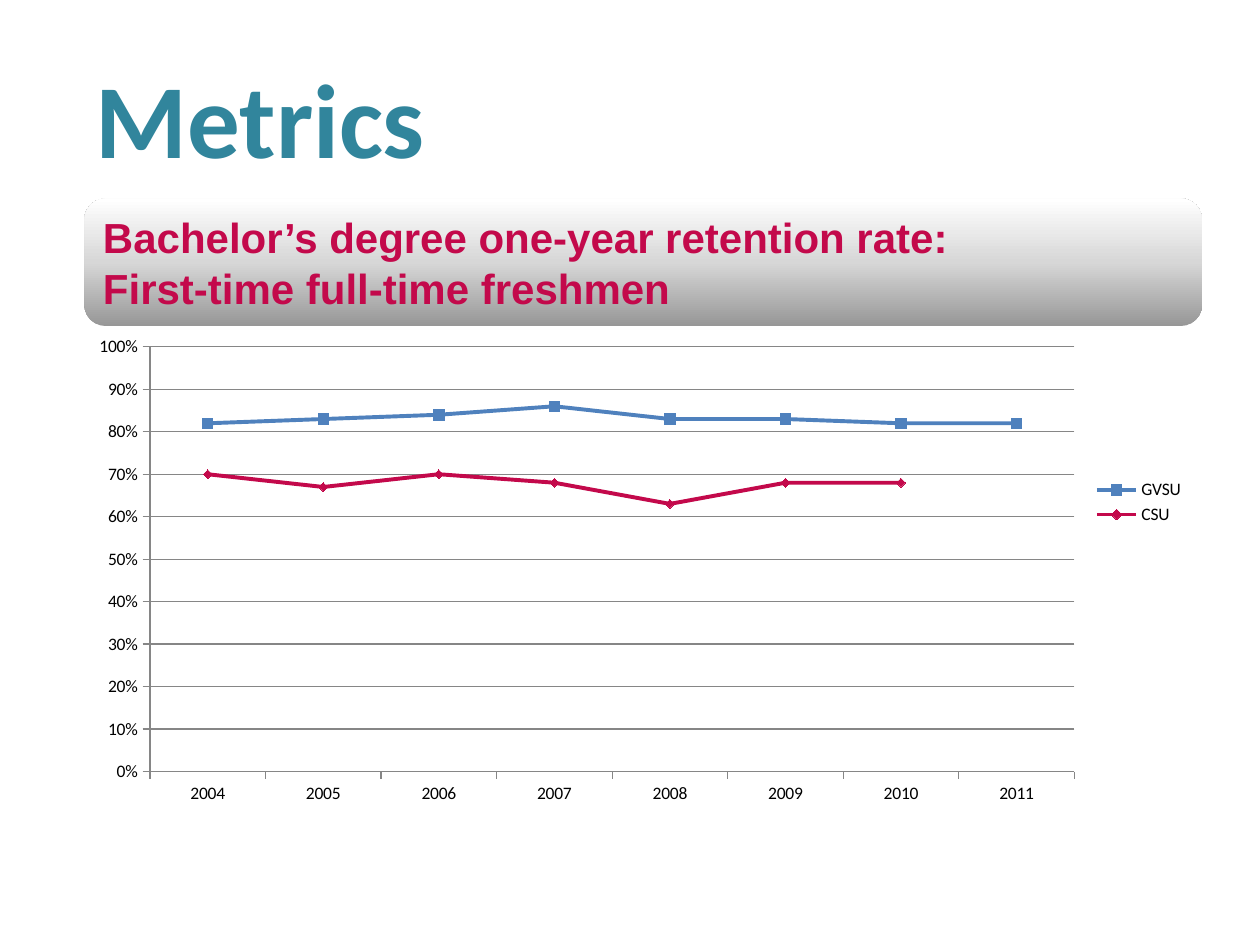
"""Build the Metrics slide: a title, a gradient banner and a retention line chart."""
import copy

import lxml.etree
import pptx
import pptx.chart.data
import pptx.dml.color
import pptx.enum.chart
import pptx.enum.dml
import pptx.enum.shapes
import pptx.enum.text
import pptx.util

WIDTH = pptx.util.Inches(10)
HEIGHT = pptx.util.Inches(7.5)
CRIMSON = "C3094B"
GREY = "868686"


def colour(value):
    return pptx.dml.color.RGBColor.from_string(value)


def area(left, top, width, height):
    return int(WIDTH * left), int(HEIGHT * top), int(WIDTH * width), int(HEIGHT * height)


deck = pptx.Presentation()
deck.slide_width, deck.slide_height = WIDTH, HEIGHT
page = deck.slides.add_slide(deck.slide_layouts[5])

title = page.shapes.title
title.left, title.top, title.width, title.height = area(0.066, 0.05, 0.367, 0.117)
title.text_frame.text = "Metrics"
title.text_frame.auto_size = pptx.enum.text.MSO_AUTO_SIZE.NONE
title.text_frame.vertical_anchor = pptx.enum.text.MSO_ANCHOR.TOP
heading = title.text_frame.paragraphs[0]
heading.alignment = pptx.enum.text.PP_ALIGN.LEFT
heading.font.name, heading.font.size, heading.font.bold = "Calibri", pptx.util.Pt(60), True
heading.font.color.rgb = colour("31859C")

rates = pptx.chart.data.CategoryChartData(number_format="0%")
rates.categories = [str(year) for year in range(2004, 2012)]
rates.add_series("GVSU", (0.82, 0.83, 0.84, 0.86, 0.83, 0.83, 0.82, 0.82))
rates.add_series("CSU", (0.7, 0.67, 0.7, 0.68, 0.63, 0.68, 0.68, None))
chart = page.shapes.add_chart(
    pptx.enum.chart.XL_CHART_TYPE.LINE_MARKERS, *area(0.066, 0.2, 0.884, 0.663), rates
).chart
chart.has_title = False
chart.font.name, chart.font.size = "Calibri", pptx.util.Pt(10)
chart.font.color.rgb = colour("000000")
chart.has_legend = True
chart.legend.position = pptx.enum.chart.XL_LEGEND_POSITION.RIGHT
chart.legend.include_in_layout = False

plot = chart.plots[0]
plot.vary_by_categories = False
marker_style = pptx.enum.chart.XL_MARKER_STYLE
looks = (("4F81BD", marker_style.SQUARE, 6), (CRIMSON, marker_style.DIAMOND, 5))
for series, (tint, style, size) in zip(plot.series, looks):
    series.smooth = False
    series.format.line.color.rgb = colour(tint)
    series.format.line.width = pptx.util.Pt(2.25)
    series.marker.style, series.marker.size = style, size
    series.marker.format.fill.solid()
    series.marker.format.fill.fore_color.rgb = colour(tint)
    series.marker.format.line.color.rgb = colour(tint)

scale = chart.value_axis
scale.minimum_scale, scale.maximum_scale, scale.major_unit = 0, 1, 0.1
scale.has_major_gridlines = True
scale.tick_labels.number_format = "0%"
scale.tick_labels.number_format_is_linked = False
for axis in (scale, chart.category_axis):
    axis.major_tick_mark = pptx.enum.chart.XL_TICK_MARK.OUTSIDE
for ruled in (scale, chart.category_axis, scale.major_gridlines):
    ruled.format.line.color.rgb = colour(GREY)
    ruled.format.line.width = pptx.util.Pt(0.75)

plot_area = chart.element.chart.plotArea
for old in plot_area.findall("{*}layout"):
    plot_area.remove(old)
namespace = "{http://schemas.openxmlformats.org/drawingml/2006/chart}"
layout = lxml.etree.Element(namespace + "layout")
plot_area.insert(0, layout)
manual = lxml.etree.SubElement(layout, namespace + "manualLayout")
for tag, value in (
    ("layoutTarget", "inner"), ("xMode", "edge"), ("yMode", "edge"),
    ("x", "0.06"), ("y", "0.252"), ("w", "0.83"), ("h", "0.678"),
):
    lxml.etree.SubElement(manual, namespace + tag, val=value)

banner = page.shapes.add_shape(
    pptx.enum.shapes.MSO_SHAPE.ROUNDED_RECTANGLE, *area(0.067, 0.21, 0.887, 0.135)
)
banner.shadow.inherit = False
banner.line.fill.background()
banner.fill.gradient()
banner.fill.gradient_angle = 90
stop_list = banner.element.spPr.find(".//{*}gsLst")
stop_list.append(copy.deepcopy(stop_list[0]))
shades = ((0, "979797"), (0.5, "D7D7D7"), (1, "FFFFFF"))
for stop, (position, shade) in zip(banner.fill.gradient_stops, shades):
    stop.position = position
    stop.color.rgb = colour(shade)

box = banner.text_frame
box.word_wrap = True
box.vertical_anchor = pptx.enum.text.MSO_ANCHOR.MIDDLE
box.text = "Bachelor’s degree one-year retention rate:\nFirst-time full-time freshmen"
for para in box.paragraphs:
    para.alignment = pptx.enum.text.PP_ALIGN.LEFT
    para.font.name, para.font.size, para.font.bold = "Arial", pptx.util.Pt(24), True
    para.font.color.rgb = colour(CRIMSON)

deck.save("out.pptx")
